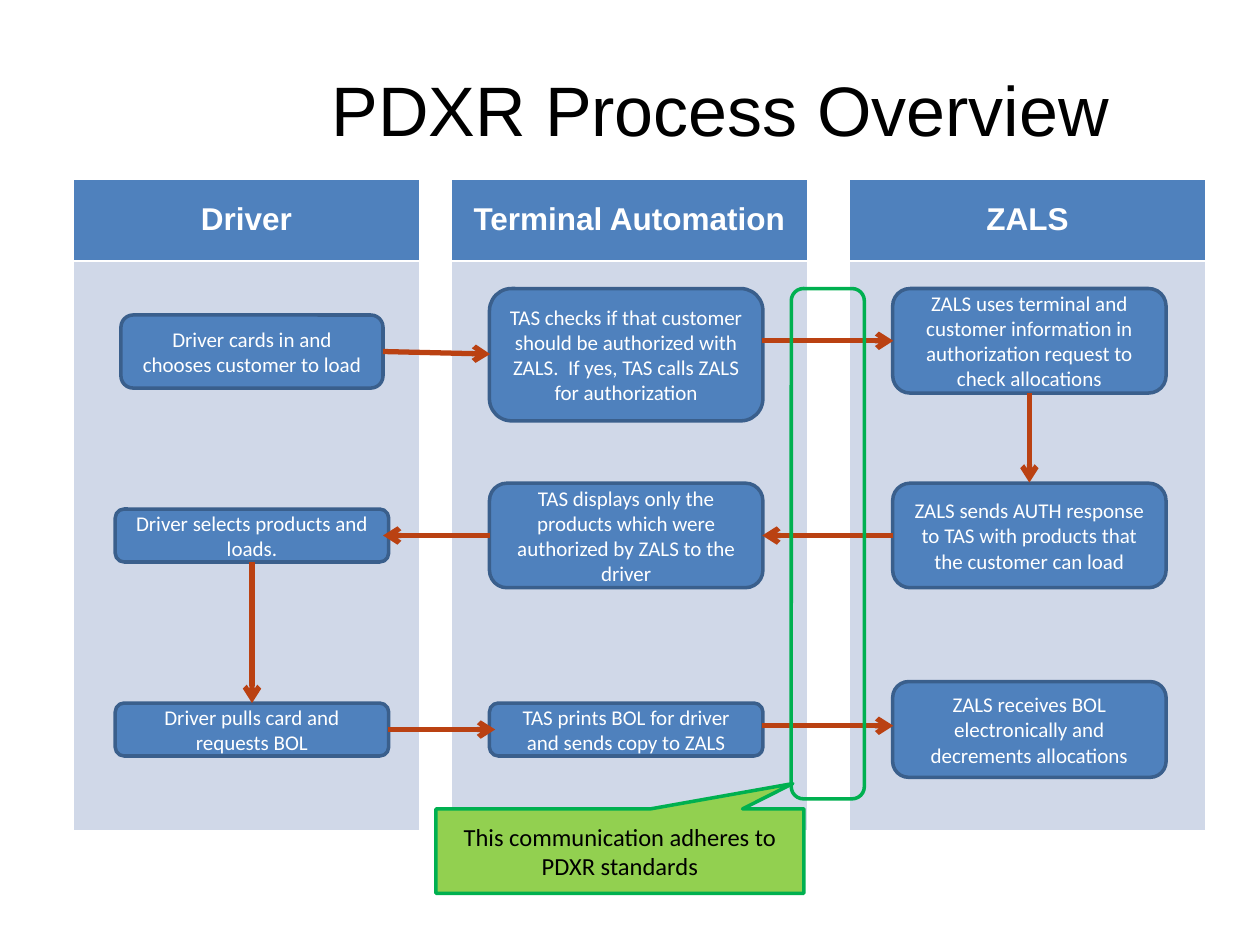
from lxml import etree
from pptx import Presentation
from pptx import util as u
from pptx.dml import color
from pptx.enum import shapes, text
from pptx.oxml import ns


def paint(fill, tone):
    fill.solid()
    fill.fore_color.rgb = color.RGBColor.from_string(tone)


def write(frame, words, size, font, tone, bold=False):
    frame.word_wrap = True
    frame.vertical_anchor = text.MSO_ANCHOR.MIDDLE
    para = frame.paragraphs[0]
    para.alignment = text.PP_ALIGN.CENTER
    span = para.add_run()
    span.text = words
    span.font.size = u.Pt(size)
    span.font.name = font
    span.font.bold = bold
    paint(span.font.fill, tone)


deck = Presentation()
deck.slide_width, deck.slide_height = u.Inches(10), u.Inches(7.5)
page = deck.slides.add_slide(deck.slide_layouts[6])
unit = deck.slide_width // 100

title = page.shapes.add_textbox(*[round(n * unit) for n in (19.3, 3.6, 75.7, 10)])
write(title.text_frame, "PDXR Process Overview", 40, "Arial", "000000")

widths = [27.5, 2.5, 28.3, 3.3, 28.3]
heights = [6.5, 45.2]
area = (5.8, 14.2, sum(widths), sum(heights))
lanes = page.shapes.add_table(2, 5, *[round(n * unit) for n in area]).table
lanes.horz_banding = False
for column, width in zip(lanes.columns, widths):
    column.width = round(width * unit)
for row, height in zip(lanes.rows, heights):
    row.height = round(height * unit)
for index, heading in enumerate(["Driver", "", "Terminal Automation", "", "ZALS"]):
    head, body = lanes.cell(0, index), lanes.cell(1, index)
    if heading:
        paint(head.fill, "4F81BD")
        paint(body.fill, "D0D8E8")
        head.vertical_anchor = text.MSO_ANCHOR.MIDDLE
        write(head.text_frame, heading, 18, "Arial", "FFFFFF", True)
    else:
        head.merge(body)
        head.fill.background()

driver, terminal, allocator = 20, 49.7, 81.7
first, second, third = 27.05, 42.5, 57.9
steps = [
    (driver, 27.9, 20.8, 5.8, "Driver cards in and chooses customer to load"),
    (terminal, 28.15, 21.7, 10.5, "TAS checks if that customer should be authorized with "
     "ZALS.  If yes, TAS calls ZALS for authorization"),
    (allocator, first, 21.7, 8.3, "ZALS uses terminal and customer information in "
     "authorization request to check allocations"),
    (allocator, second, 21.7, 8.3, "ZALS sends AUTH response to TAS with products that "
     "the customer can load"),
    (terminal, second, 21.7, 8.3, "TAS displays only the products which were "
     "authorized by ZALS to the driver"),
    (driver, second, 21.7, 4.2, "Driver selects products and loads."),
    (driver, third, 21.7, 4.2, "Driver pulls card and requests BOL"),
    (terminal, third, 21.7, 4.2, "TAS prints BOL for driver and sends copy to ZALS"),
    (allocator, third, 21.7, 7.6, "ZALS receives BOL electronically and decrements allocations"),
]
for middle, center, width, height, words in steps:
    spot = (middle - width / 2, center - height / 2, width, height)
    box = page.shapes.add_shape(shapes.MSO_SHAPE.ROUNDED_RECTANGLE, *[round(n * unit) for n in spot])
    box.shadow.inherit = False
    paint(box.fill, "4F81BD")
    paint(box.line.fill, "3A5F8C")
    box.line.width = u.Pt(2)
    write(box.text_frame, words, 12, "Calibri", "FFFFFF")

arrows = [
    (30.4, 27.9, 38.9, 28.1),
    (38.9, second, 30.4, second),
    (30.8, third, 39.3, third),
    (60.5, first, 70.9, first),
    (70.9, second, 60.5, second),
    (60.5, 57.6, 70.9, 57.6),
    (allocator, 31.2, allocator, 38.3),
    (driver, 44.6, driver, 55.8),
]
for ends in arrows:
    arrow = page.shapes.add_connector(shapes.MSO_CONNECTOR.STRAIGHT, *[round(n * unit) for n in ends])
    paint(arrow.line.fill, "BA4112")
    arrow.line.width = u.Pt(3)
    etree.SubElement(arrow.line._get_or_add_ln(), ns.qn("a:tailEnd"), type="arrow")
    etree.SubElement(arrow._element.spPr, ns.qn("a:effectLst"))

frame = page.shapes.add_shape(
    shapes.MSO_SHAPE.ROUNDED_RECTANGLE, *[round(n * unit) for n in (62.8, 22.9, 5.8, 40.5)])
frame.fill.background()

callout = page.shapes.add_shape(
    shapes.MSO_SHAPE.RECTANGULAR_CALLOUT, *[round(n * unit) for n in (34.6, 64.2, 29.2, 6.7)])
callout.adjustments[0], callout.adjustments[1] = 0.47, -0.8
paint(callout.fill, "92D050")
write(callout.text_frame, "This communication adheres to PDXR standards", 14, "Calibri", "000000")

for outline in (frame, callout):
    outline.shadow.inherit = False
    paint(outline.line.fill, "00B050")
    outline.line.width = u.Pt(2)

deck.save("out.pptx")
